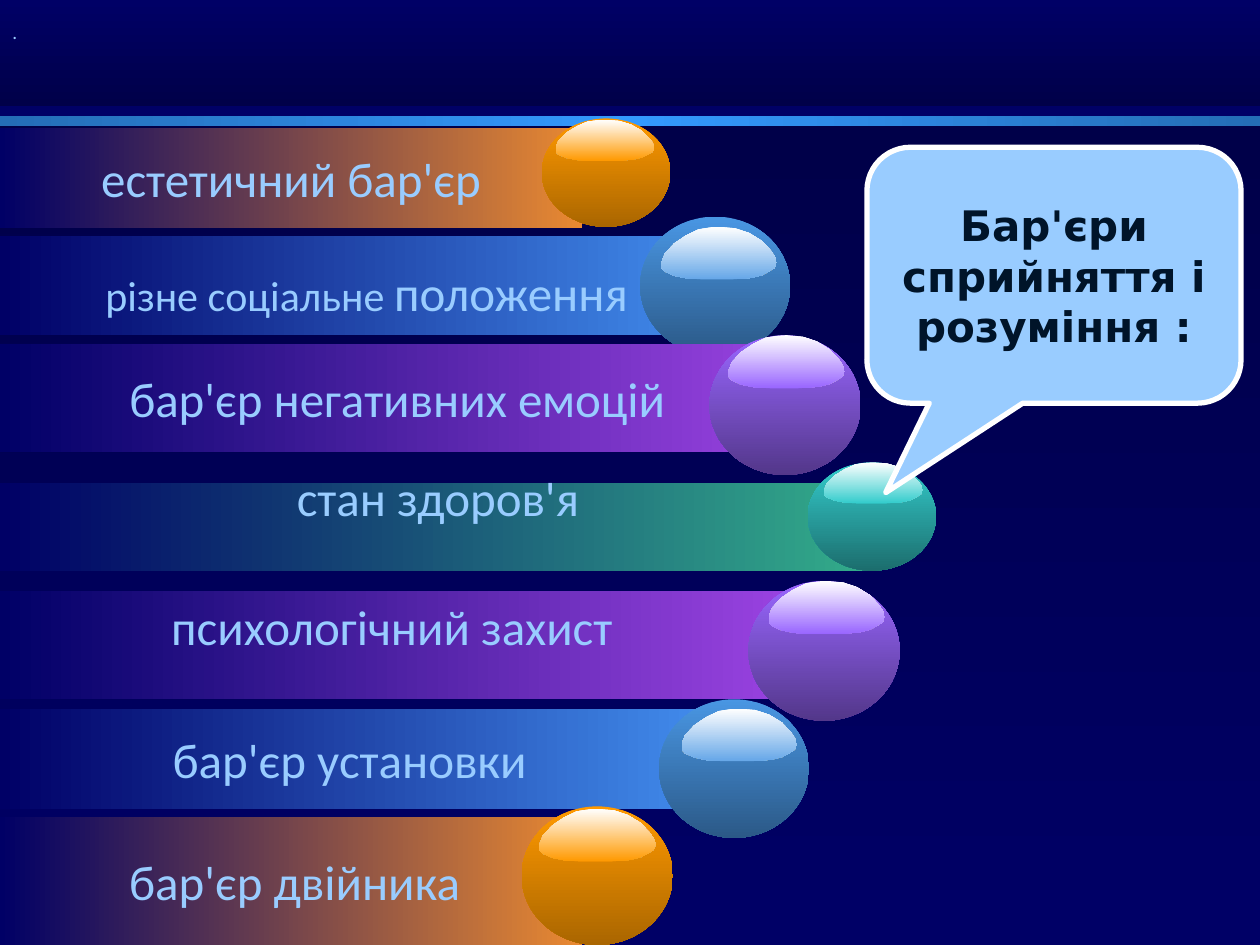
from copy import deepcopy

from pptx import Presentation
from pptx.dml.color import RGBColor
from pptx.enum.shapes import MSO_SHAPE
from pptx.enum.text import MSO_ANCHOR, PP_ALIGN
from pptx.oxml.ns import qn
from pptx.util import Pt

RECT, OVAL = MSO_SHAPE.RECTANGLE, MSO_SHAPE.OVAL
CALLOUT = MSO_SHAPE.ROUNDED_RECTANGULAR_CALLOUT
MIDDLE, TOP = MSO_ANCHOR.MIDDLE, MSO_ANCHOR.TOP
LEFT, CENTER, RIGHT = PP_ALIGN.LEFT, PP_ALIGN.CENTER, PP_ALIGN.RIGHT

WIDE, HIGH = 720, 540
NAVY, DARK, SKY, WHITE = "000066", "000049", "99CCFF", "FFFFFF"
ACROSS, DOWN = 0, 270
INSETS = (7.2, 3.6, 7.2, 3.6)

# background band: top, height, gradient colours, angle
BANDS = [
    (0, 60.5, (NAVY, DARK), DOWN),
    (71.3, 468.7, (DARK, NAVY), DOWN),
    (66.2, 5.8, ("246DB6", "3399FF", "246DB6"), ACROSS),
]

# theme: bar width, bar end colour, ball top and bottom, gloss end
THEMES = {
    "orange": (332.6, "E98931", "FF9900", "AA6600", "FF9900"),
    "blue": (399.6, "418AEB", "4996E3", "2B5987", "66A7E8"),
    "violet": (447.8, "9942E0", "9966FF", "53378A", "9966FF"),
    "teal": (500.4, "33AD8A", "33CCCC", "1C6E6E", "33CCCC"),
}

# text, theme, bar top and height, ball box, gloss offset, extra left and bottom inset
ROWS = [
    ("естетичний бар'єр", "orange", 73.4, 56.9,
     (309.6, 67.7, 73.4, 61.9), (7.9, 0.7), 0, 0),
    ("", "blue", 134.6, 56.9,
     (365.8, 123.8, 85.7, 79.2), (12.2, 5.8), 0, 0),
    ("бар'єр негативних емоцій", "violet", 196.6, 61.9,
     (405.4, 191.5, 86.4, 79.9), (10.8, 0), 6, 0),
    ("стан здоров'я", "teal", 275.8, 50.4,
     (461.5, 264.2, 73.4, 61.9), (9.4, 0), 0, 34),
    ("психологічний захист", "violet", 337.7, 61.9,
     (427.7, 331.9, 86.4, 79.9), (11.5, 0), 0, 22),
    ("бар'єр установки", "blue", 405.4, 56.9,
     (376.6, 399.6, 85.7, 79.2), (12.9, 5.3), 0, 0),
    ("бар'єр двійника", "orange", 466.6, 73.4,
     (298.1, 460.8, 86.4, 79.2), (10.1, 1.4), 4, 0),
]
SOCIAL = [("різне соціальне ", 24), ("положення", 28)]
TITLE = "Бар'єри сприйняття і розуміння :"

# gloss outline in percent of its box
GLOSS = [
    (98, 56), (100, 68), (98, 78), (93, 85), (87, 92), (78, 97), (67, 99),
    (60, 100), (36, 100), (22, 98), (11, 93), (3, 85), (0, 78), (0, 68),
    (3, 51), (11, 32), (21, 17), (32, 5), (43, 1), (50, 0), (64, 3),
    (76, 12), (87, 27), (95, 46),
]
GLOSS_W, GLOSS_H = 0.77, 0.38


def color(code):
    return RGBColor.from_string(code)


def blend(shape, codes, angle):
    """Fill with evenly spaced gradient stops, without line or shadow."""
    shape.shadow.inherit = False
    shape.line.fill.background()
    fill = shape.fill
    fill.gradient()
    fill.gradient_angle = angle
    stops = shape._element.spPr.find(qn("a:gradFill")).find(qn("a:gsLst"))
    while len(stops) < len(codes):
        stops.append(deepcopy(stops[0]))
    for i, (stop, code) in enumerate(zip(fill.gradient_stops, codes)):
        stop.position = i / (len(codes) - 1)
        stop.color.rgb = color(code)


def put(shapes, kind, box):
    return shapes.add_shape(kind, *map(Pt, box))


def write(shape, runs, align, anchor=MIDDLE, wrap=False, insets=INSETS,
          font="Calibri", code=SKY, bold=False):
    frame = shape.text_frame
    frame.word_wrap = wrap
    frame.vertical_anchor = anchor
    (frame.margin_left, frame.margin_top,
     frame.margin_right, frame.margin_bottom) = map(Pt, insets)
    par = frame.paragraphs[0]
    par.alignment = align
    for text, size in runs:
        run = par.add_run()
        run.text = text
        run.font.name = font
        run.font.size = Pt(size)
        run.font.bold = bold
        run.font.color.rgb = color(code)


def add_ball(shapes, box, shift, top, low, shine):
    group = shapes.add_group_shape().shapes
    blend(put(group, OVAL, box), (top, low), DOWN)
    x, y = box[0] + shift[0], box[1] + shift[1]
    w, h = box[2] * GLOSS_W, box[3] * GLOSS_H
    dots = [(Pt(x + w * px / 100), Pt(y + h * py / 100)) for px, py in GLOSS]
    path = group.build_freeform(*dots[0])
    path.add_line_segments(dots[1:], close=True)
    blend(path.convert_to_shape(), (WHITE, shine), DOWN)


def main():
    deck = Presentation()
    deck.slide_width, deck.slide_height = Pt(WIDE), Pt(HIGH)
    slide = deck.slides.add_slide(deck.slide_layouts[6])
    back = slide.background.fill
    back.solid()
    back.fore_color.rgb = color(NAVY)
    shapes = slide.shapes

    for top, high, codes, angle in BANDS:
        blend(put(shapes, RECT, (0, top, WIDE, high)), codes, angle)

    for text, theme, top, high, box, shift, left, low in ROWS:
        wide, end, *tones = THEMES[theme]
        bar = put(shapes, RECT, (0, top, wide, high))
        blend(bar, (NAVY, end), ACROSS)
        if text:
            write(bar, [(text, 28)], CENTER,
                  insets=(7.2 + left, 3.6, 7.2, 3.6 + low))
        add_ball(shapes, box, shift, *tones)

    label = shapes.add_textbox(Pt(0), Pt(146.2), Pt(365.8), Pt(41))
    write(label, SOCIAL, RIGHT, anchor=TOP, wrap=True)
    dot = shapes.add_textbox(Pt(0), Pt(7.9), Pt(17.3), Pt(20.9))
    write(dot, [(".", 11)], LEFT)

    call = put(shapes, CALLOUT, (495.4, 84.2, 213.8, 146.2))
    call.shadow.inherit = False
    for i, value in enumerate((-0.45, 0.85, 0.17)):
        call.adjustments[i] = value
    call.fill.solid()
    call.fill.fore_color.rgb = color(SKY)
    call.line.color.rgb = color(WHITE)
    call.line.width = Pt(3)
    write(call, [(TITLE, 24)], CENTER, wrap=True, font="DejaVu Sans",
          code="001429", bold=True)

    deck.save("out.pptx")


if __name__ == "__main__":
    main()
